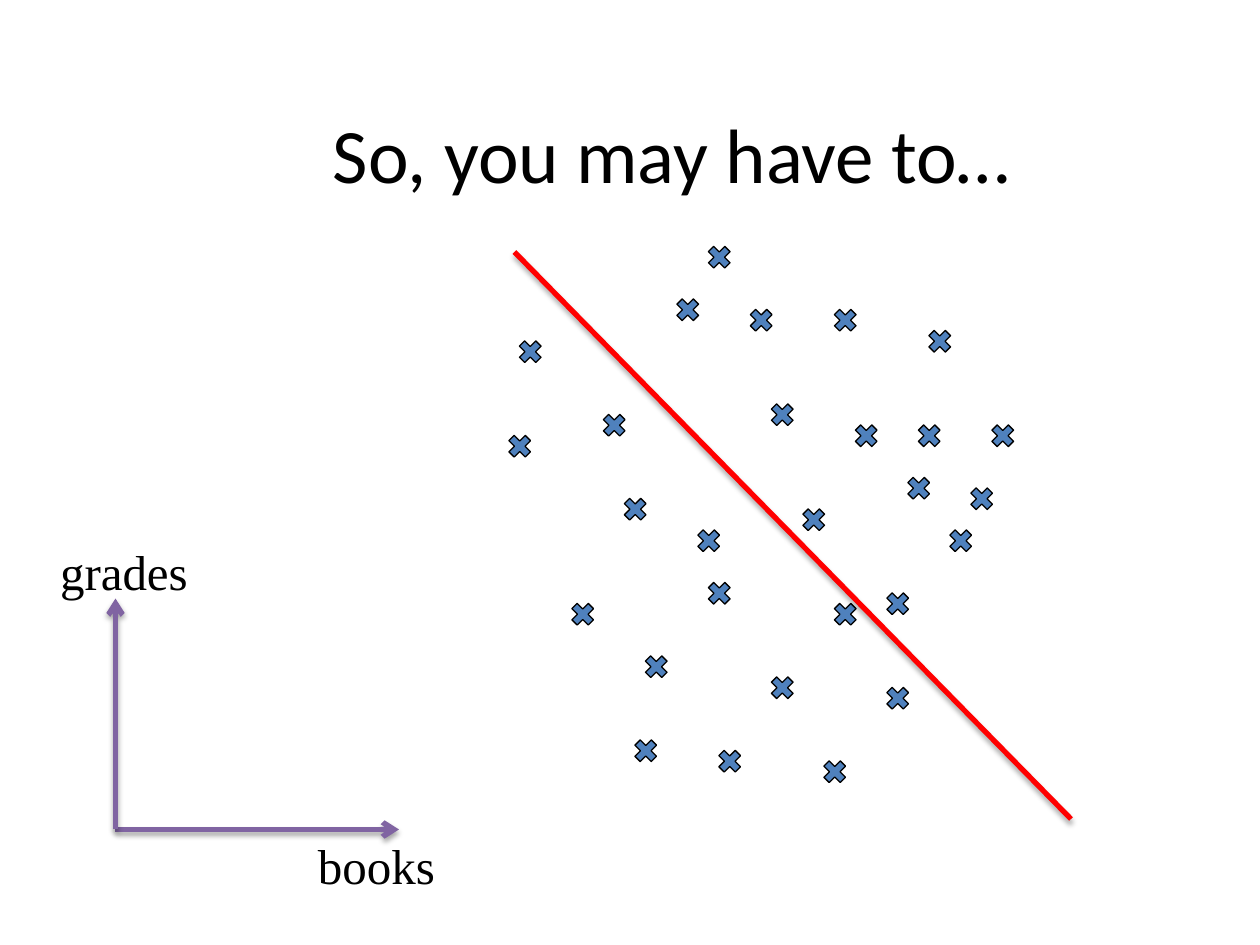
from dataclasses import dataclass
from typing import NamedTuple

from lxml.etree import SubElement
from pptx import Presentation
from pptx.dml.color import RGBColor
from pptx.enum.shapes import MSO_CONNECTOR as Connector, MSO_SHAPE as Preset
from pptx.enum.text import MSO_ANCHOR as Anchor, MSO_AUTO_SIZE as AutoSize, PP_ALIGN as Align
from pptx.oxml.ns import qn
from pptx.shapes.base import BaseShape
from pptx.slide import Slide
from pptx.util import Emu, Inches, Pt


@dataclass(frozen=True)
class Theme:
    ink: str = "000000"
    mark: str = "4F81BD"
    divider: str = "FF0000"
    axis: str = "8064A2"
    title_font: str = "Calibri"
    label_font: str = "Times New Roman"
    title_size: float = 44
    label_size: float = 28
    outline: float = 0.75
    stroke: float = 3


class Cell(NamedTuple):
    column: float
    row: float


class Stroke(NamedTuple):
    start: Cell
    end: Cell
    color: str
    arrow: bool = False


class Label(NamedTuple):
    text: str
    corner: Cell
    width: float


THEME = Theme()
COLUMNS, ROWS = 120, 90
WIDTH, HEIGHT = Inches(10), Inches(7.5)
MARK_SIDE = 3
LABEL_HEIGHT = 6.8
ORIGIN = Cell(11, 79)

BACK_MARKS = [
    (61, 62), (71, 29), (76, 48), (79, 29), (79, 57),
    (68, 71), (60, 70), (88, 31), (84, 65), (49, 32),
]
FRONT_MARKS = [
    (73, 38), (59, 47), (48, 41), (94, 40), (87, 40), (67, 23),
    (86, 45), (78, 72), (92, 46), (81, 40), (90, 50), (66, 50),
    (54, 57), (73, 64), (84, 56), (67, 55), (64, 28), (57, 39),
]
STROKES = [
    Stroke(Cell(49, 24), Cell(102, 78), THEME.divider),
    Stroke(ORIGIN, Cell(38, 79), THEME.axis, arrow=True),
    Stroke(ORIGIN, Cell(11, 57), THEME.axis, arrow=True),
]
LABELS = [
    Label("books", Cell(29, 79), 13.7),
    Label("grades", Cell(4.4, 51), 14.8),
]


def across(columns: float) -> Emu:
    return Emu(round(WIDTH * columns / COLUMNS))


def down(rows: float) -> Emu:
    return Emu(round(HEIGHT * rows / ROWS))


def write(box: BaseShape, text: str, *, font: str, size: float,
          anchor: Anchor = Anchor.TOP, wrap: bool = True) -> None:
    frame = box.text_frame
    frame.word_wrap = wrap
    frame.vertical_anchor = anchor
    para = frame.paragraphs[0]
    para.alignment = Align.CENTER
    span = para.add_run()
    span.text = text
    span.font.name = font
    span.font.size = Pt(size)
    span.font.color.rgb = RGBColor.from_string(THEME.ink)


def add_title(page: Slide, text: str) -> None:
    title = page.shapes.title
    title.left, title.top = across(13), down(7)
    title.width, title.height = across(102), down(15)
    write(title, text, font=THEME.title_font, size=THEME.title_size, anchor=Anchor.MIDDLE)


def add_mark(page: Slide, corner: Cell) -> None:
    mark = page.shapes.add_shape(
        Preset.MATH_MULTIPLY, across(corner.column), down(corner.row),
        across(MARK_SIDE), down(MARK_SIDE))
    mark.shadow.inherit = False
    mark.fill.solid()
    mark.fill.fore_color.rgb = RGBColor.from_string(THEME.mark)
    mark.line.color.rgb = RGBColor.from_string(THEME.ink)
    mark.line.width = Pt(THEME.outline)


def add_stroke(page: Slide, stroke: Stroke) -> None:
    start, end = stroke.start, stroke.end
    line = page.shapes.add_connector(
        Connector.STRAIGHT, across(start.column), down(start.row),
        across(end.column), down(end.row))
    line.line.color.rgb = RGBColor.from_string(stroke.color)
    line.line.width = Pt(THEME.stroke)
    properties = line._element.spPr
    if stroke.arrow:
        SubElement(properties.find(qn("a:ln")), qn("a:tailEnd"), type="arrow")
    effects = SubElement(properties, qn("a:effectLst"))
    shadow = SubElement(
        effects, qn("a:outerShdw"), blurRad=str(Pt(3.1)), dist=str(Pt(1.8)),
        dir="5400000", rotWithShape="0")
    color = SubElement(shadow, qn("a:srgbClr"), val=THEME.ink)
    SubElement(color, qn("a:alpha"), val="35000")


def add_label(page: Slide, label: Label) -> None:
    box = page.shapes.add_textbox(
        across(label.corner.column), down(label.corner.row),
        across(label.width), down(LABEL_HEIGHT))
    write(box, label.text, font=THEME.label_font, size=THEME.label_size, wrap=False)
    box.text_frame.auto_size = AutoSize.SHAPE_TO_FIT_TEXT


def main() -> None:
    deck = Presentation()
    deck.slide_width, deck.slide_height = WIDTH, HEIGHT
    page = deck.slides.add_slide(deck.slide_layouts.get_by_name("Title Only"))
    add_title(page, "So, you may have to…")
    for corner in BACK_MARKS:
        add_mark(page, Cell(*corner))
    for stroke in STROKES:
        add_stroke(page, stroke)
    for label in LABELS:
        add_label(page, label)
    for corner in FRONT_MARKS:
        add_mark(page, Cell(*corner))
    deck.save("out.pptx")


if __name__ == "__main__":
    main()
